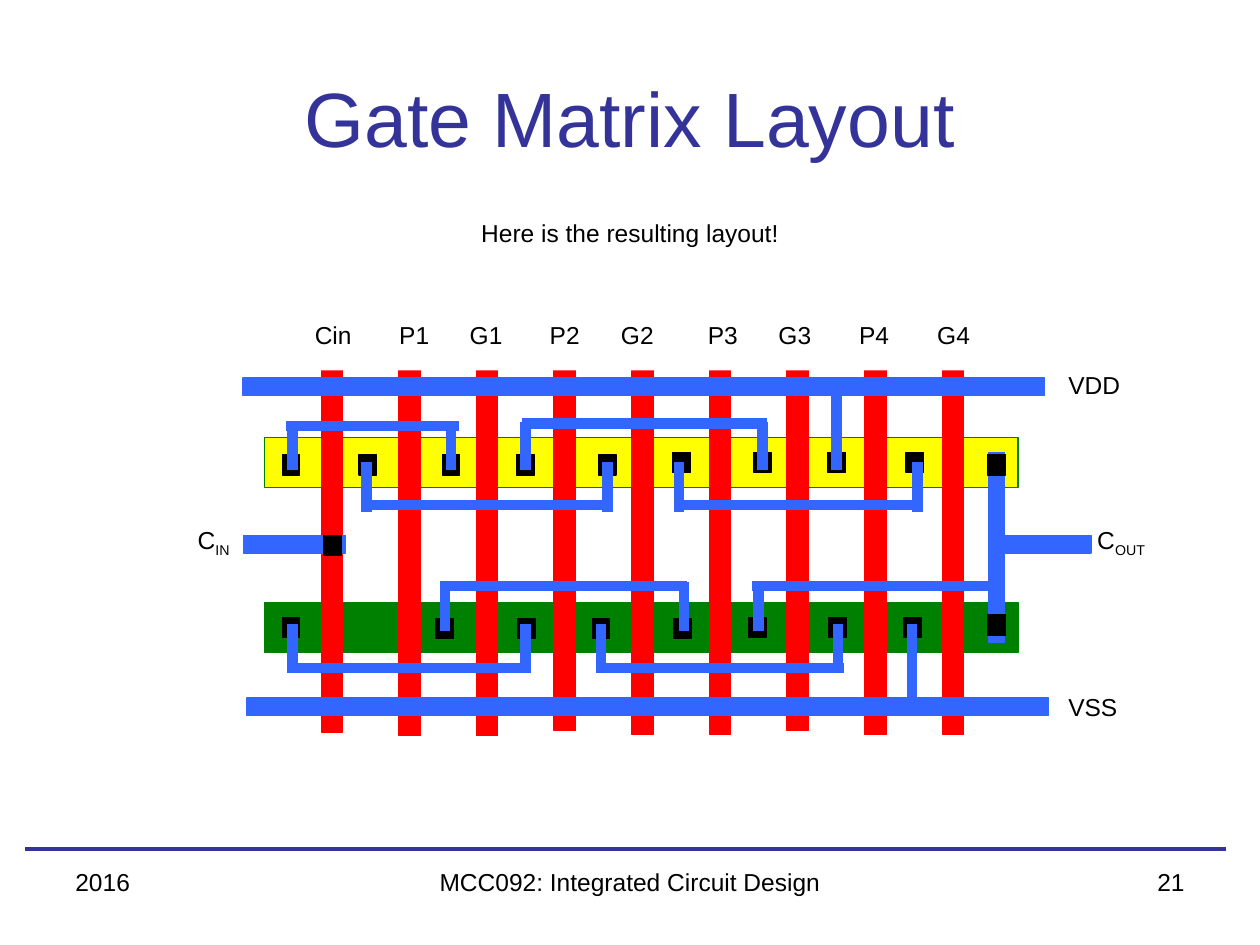
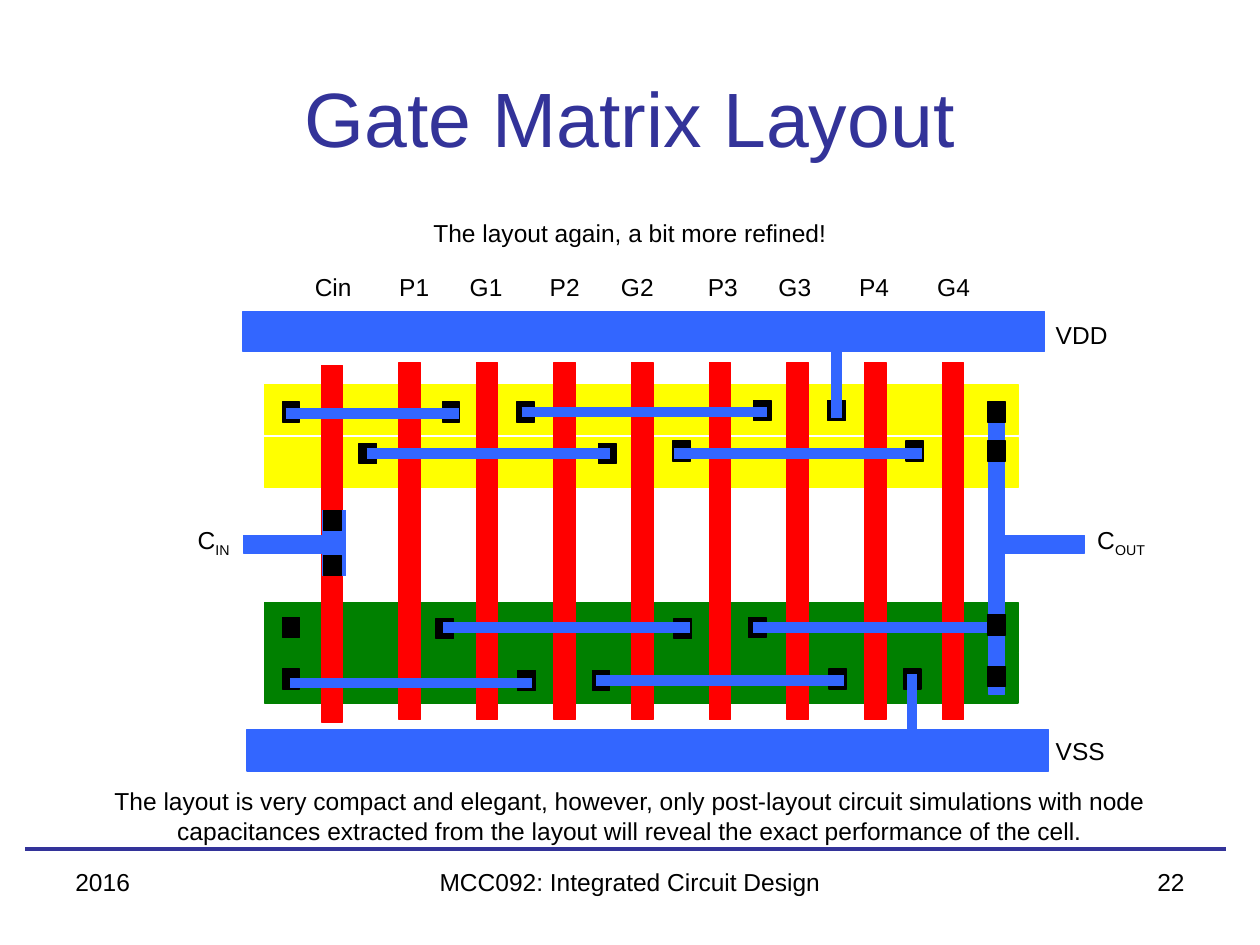
"""Build two slides that show the gate matrix layout of a carry cell."""
from lxml import etree
from pptx import Presentation
from pptx.dml.color import RGBColor
from pptx.enum.shapes import MSO_CONNECTOR, MSO_SHAPE
from pptx.enum.text import MSO_ANCHOR, PP_ALIGN
from pptx.oxml.ns import qn
from pptx.util import Inches, Pt

RECTANGLE = MSO_SHAPE.RECTANGLE
STRAIGHT = MSO_CONNECTOR.STRAIGHT
LEFT, CENTER, RIGHT = PP_ALIGN.LEFT, PP_ALIGN.CENTER, PP_ALIGN.RIGHT
TOP, MIDDLE = MSO_ANCHOR.TOP, MSO_ANCHOR.MIDDLE

COLORS = {
    "title": "333399", "text": "000000", "paper": "FFFFFF",
    "pmos": "FFFF00", "nmos": "008000", "gate": "FF0000",
    "metal": "3366FF", "contact": "000000",
}
FONT = "Arial"

deck = Presentation()
deck.slide_width, deck.slide_height = Inches(10), Inches(7.5)
COL, ROW = deck.slide_width / 100, deck.slide_height / 75

GATES = ["Cin", "P1", "G1", "P2", "G2", "P3", "G3", "P4", "G4"]
GATE_LABEL_STOPS = [6.7, 12.3, 18.65, 24.3, 31.2, 36.8, 43.2, 49.4]
FIRST_GATE, GATE_PITCH, GATE_WIDTH = 25.5, 6.16, 1.7
DIFFUSION_LEFT, DIFFUSION_WIDTH, DIFFUSION_HEIGHT = 21, 59.8, 4
RAIL_WIDTH, STUB_TOP, STUB_HEIGHT = 63.6, 42.5, 1.4
CONTACT_WIDTH, CONTACT_HEIGHT = 1.4, 1.6
OUT_CONTACT, IN_CONTACT = 78.4, 25.7
WIRE, WIDE_WIRE = 6, 14

layouts = [
    {
        "number": "21",
        "caption": "Here is the resulting layout!",
        "closing": "",
        "diffusions": [(34.7, "pmos", "nmos"), (47.8, "nmos", "nmos")],
        "gate_tops": [28.6, 28.9, 28.9, 28.5, 28.8, 28.8, 28.5, 28.8, 28.8],
        "gate_height": 29.5,
        "gate_label_top": 24.9,
        "supply_labels": (83.8, 28.9, 54.4),
        "rails": [(30, 1.4), (55.4, 1.4)],
        "out_stub": 8.1,
        "out_strap": (35.9, 15.1),
        "contacts": {
            49: [22.4, 59.4, 65.8, 71.7],
            49.1: [34.6, 41.1, 47, 53.5],
            35.9: [53.4, 59.8, 65.7, 71.9],
            36.1: [22.4, 28.5, 35.1, 41, 47.5],
        },
        "strap_contacts": [(OUT_CONTACT, 36.1), (OUT_CONTACT, 48.8), (IN_CONTACT, 42.5)],
        "legs": {
            (53.4, 49.5, WIRE): [23.2, 41.7, 47.7, 66.5],
            (50.1, 46.2, WIRE): [35.3, 54.3, 60.2],
            (55.5, 49.5, WIRE): [72.4],
            (40.6, 36.7, WIRE): [29.1, 48.2, 53.9, 72.8],
            (37.3, 33.5, WIRE): [23.2, 35.8, 41.7, 60.5],
            (37.3, 31.3, WIRE): [66.4],
        },
        "bars": {
            53: [(22.9, 42.1), (47.3, 67)],
            46.5: [(34.9, 54.5), (59.7, 79)],
            40.1: [(29.1, 48.4), (53.5, 73.2)],
            33.8: [(22.7, 36.4)],
            33.6: [(41.4, 60.9)],
        },
    },
    {
        "number": "22",
        "caption": "The layout again, a bit more refined!",
        "closing": "The layout is very compact and elegant, however, only post-layout "
                   "circuit simulations with node capacitances extracted from the layout "
                   "will reveal the exact performance of the cell.",
        "diffusions": [(34.7, "pmos", "pmos"), (47.8, "nmos", "nmos"),
                       (30.5, "pmos", "pmos"), (51.8, "nmos", "nmos")],
        "gate_tops": [29] + [28.8] * 8,
        "gate_height": 28.3,
        "gate_label_top": 21.1,
        "supply_labels": (82.8, 24.9, 57.9),
        "rails": [(24.7, 3.2), (57.9, 3.3)],
        "out_stub": 7.6,
        "out_strap": (31.9, 23.2),
        "contacts": {
            53.1: [22.4, 65.8, 71.7],
            53.2: [41.1, 47],
            49: [22.4, 59.4],
            49.1: [34.6, 53.5],
            35: [53.4, 71.9],
            35.2: [28.5, 47.5],
            31.8: [59.8, 65.7],
            31.9: [22.4, 35.1, 41],
        },
        "strap_contacts": [(OUT_CONTACT, 52.9), (OUT_CONTACT, 48.8), (OUT_CONTACT, 31.9),
                           (OUT_CONTACT, 35), (IN_CONTACT, 44.1), (IN_CONTACT, 40.5)],
        "legs": {
            (59.6, 53.5, WIRE): [72.4],
            (33.2, 27.1, WIRE): [66.4],
            (45.7, 40.5, WIDE_WIRE): [26.5],
        },
        "bars": {
            54.2: [(23, 42.2)],
            54: [(47.3, 67)],
            49.8: [(35.2, 54.8), (59.8, 79)],
            36: [(29.1, 48.4), (53.5, 73.2)],
            32.8: [(22.7, 36.4)],
            32.7: [(41.4, 60.9)],
        },
    },
]


def add_text(slide, text, left, top, width, height, size=14, color="text",
             align=LEFT, anchor=TOP, fill=None, subscript="", tab_stops=()):
    box = slide.shapes.add_textbox(
        round(left * COL), round(top * ROW), round(width * COL), round(height * ROW))
    if fill:
        box.fill.solid()
        box.fill.fore_color.rgb = RGBColor.from_string(COLORS[fill])
    frame = box.text_frame
    frame.word_wrap = True
    frame.vertical_anchor = anchor
    paragraph = frame.paragraphs[0]
    paragraph.alignment = align
    for part in filter(None, (text, subscript)):
        run = paragraph.add_run()
        run.text = part
        run.font.name, run.font.size = FONT, Pt(size)
        run.font.color.rgb = RGBColor.from_string(COLORS[color])
    if subscript:
        run.font._element.set("baseline", "-25000")
    if tab_stops:
        stops = etree.SubElement(paragraph._p.get_or_add_pPr(), qn("a:tabLst"))
        for stop in tab_stops:
            etree.SubElement(stops, qn("a:tab"), pos=str(round(stop * COL)), algn="l")


def add_block(slide, left, top, width, height, fill, outline=None):
    block = slide.shapes.add_shape(
        RECTANGLE, round(left * COL), round(top * ROW), round(width * COL), round(height * ROW))
    block.shadow.inherit = False
    block.fill.solid()
    block.fill.fore_color.rgb = RGBColor.from_string(COLORS[fill])
    block.line.color.rgb = RGBColor.from_string(COLORS[outline or fill])
    block.line.width = Pt(0.75)


for layout in layouts:
    slide = deck.slides.add_slide(deck.slide_layouts[6])
    add_text(slide, "Gate Matrix Layout", 5, 3, 90, 12.5, size=44, color="title",
             align=CENTER, anchor=MIDDLE)

    for top, fill, outline in layout["diffusions"]:
        add_block(slide, DIFFUSION_LEFT, top, DIFFUSION_WIDTH, DIFFUSION_HEIGHT, fill, outline)
    for index, top in enumerate(layout["gate_tops"]):
        add_block(slide, FIRST_GATE + index * GATE_PITCH, top, GATE_WIDTH,
                  layout["gate_height"], "gate")

    add_text(slide, "\t".join(GATES), 24, layout["gate_label_top"], 65.4, 4.5,
             fill="paper", tab_stops=GATE_LABEL_STOPS)
    label_left, vdd_top, vss_top = layout["supply_labels"]
    add_text(slide, "VDD", label_left, vdd_top, 7.9, 4.5, fill="paper")
    add_text(slide, "VSS", label_left, vss_top, 7.9, 4.5, fill="paper")
    add_text(slide, "C", 86.1, 41.2, 7.9, 4.5, fill="paper", subscript="OUT")
    add_text(slide, "C", 14.7, 41.2, 7.9, 4.5, subscript="IN")

    for left, (top, height) in zip((19.3, 19.6), layout["rails"]):
        add_block(slide, left, top, RAIL_WIDTH, height, "metal")
    for left, width in ((19.3, 8.1), (78.5, layout["out_stub"])):
        add_block(slide, left, STUB_TOP, width, STUB_HEIGHT, "metal")
    for top, lefts in layout["contacts"].items():
        for left in lefts:
            add_block(slide, left, top, CONTACT_WIDTH, CONTACT_HEIGHT, "contact")

    lines = [(2, 67.4, 97.3, 67.4, 2.25, "title")]
    for (start, end, weight), columns in layout["legs"].items():
        lines += [(column, start, column, end, weight, "metal") for column in columns]
    for row, spans in layout["bars"].items():
        lines += [(start, row, end, row, WIRE, "metal") for start, end in spans]
    for x1, y1, x2, y2, weight, color in lines:
        line = slide.shapes.add_connector(
            STRAIGHT, round(x1 * COL), round(y1 * ROW), round(x2 * COL), round(y2 * ROW))
        line.line.width = Pt(weight)
        line.line.color.rgb = RGBColor.from_string(COLORS[color])
        etree.SubElement(line._element.spPr, qn("a:effectLst"))

    strap_top, strap_height = layout["out_strap"]
    add_block(slide, 78.5, strap_top, 1.2, strap_height, "metal")
    for left, top in layout["strap_contacts"]:
        add_block(slide, left, top, CONTACT_WIDTH, CONTACT_HEIGHT, "contact")

    add_text(slide, layout["caption"], 25.4, 16.8, 49.2, 6.6, align=CENTER)
    if layout["closing"]:
        add_text(slide, layout["closing"], 6.6, 61.9, 86.8, 6.6, align=CENTER)
    add_text(slide, "2016", 5, 68.3, 23.3, 5.2)
    add_text(slide, "MCC092: Integrated Circuit Design", 31.9, 68.3, 36.2, 5.2, align=CENTER)
    add_text(slide, layout["number"], 71.7, 68.3, 23.3, 5.2, align=RIGHT)

deck.save("out.pptx")
